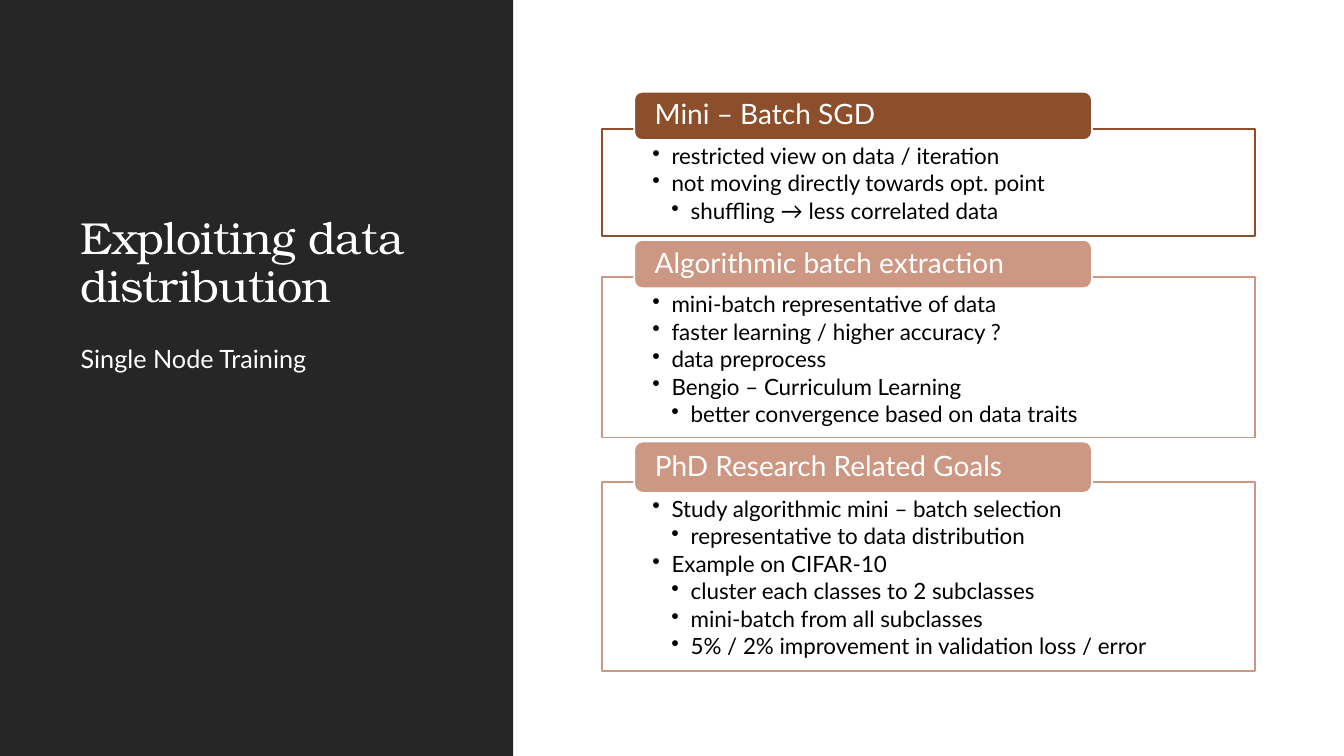
from dataclasses import dataclass

from lxml import etree
from pptx import Presentation
from pptx.dml.color import RGBColor
from pptx.enum.shapes import MSO_SHAPE as Shape
from pptx.enum.text import MSO_ANCHOR as Anchor, MSO_AUTO_SIZE as AutoSize, PP_ALIGN as Align
from pptx.oxml.ns import qn
from pptx.util import Inches, Pt


@dataclass(frozen=True)
class Theme:
    heading_font: str = "TeX Gyre Bonum"
    body_font: str = "Lato"
    title_size: float = 32
    subtitle_size: float = 18
    header_size: float = 20
    bullet_size: float = 16
    line_width: float = 1.25
    dark: str = "262626"
    white: str = "FFFFFF"
    black: str = "000000"
    brown: str = "8D4E2C"
    rose: str = "CC9783"


class SlideBuilder:
    def __init__(self, slide, theme):
        self.slide = slide
        self.theme = theme

    def style(self, paragraph, size, color, font=None, spacing=0.9, after=0):
        paragraph.font.name = font or self.theme.body_font
        paragraph.font.size = Pt(size)
        paragraph.font.color.rgb = RGBColor.from_string(color)
        paragraph.alignment = Align.LEFT
        paragraph.line_spacing = spacing
        paragraph.space_before = Pt(0)
        paragraph.space_after = Pt(after)

    def frame(self, shape, anchor, margins):
        frame = shape.text_frame
        frame.word_wrap = True
        frame.auto_size = AutoSize.NONE
        frame.vertical_anchor = anchor
        (frame.margin_left, frame.margin_top,
         frame.margin_right, frame.margin_bottom) = map(Inches, margins)
        return frame

    def shape(self, kind, box, fill, line=None):
        shape = self.slide.shapes.add_shape(kind, *map(Inches, box))
        shape.shadow.inherit = False
        shape.fill.solid()
        shape.fill.fore_color.rgb = RGBColor.from_string(fill)
        if line:
            shape.line.color.rgb = RGBColor.from_string(line)
            shape.line.width = Pt(self.theme.line_width)
        else:
            shape.line.fill.background()
        return shape

    def side_panel(self, box):
        panel = self.shape(Shape.RECTANGLE, box, self.theme.dark)
        # Behind the placeholders
        self.slide.shapes._spTree.insert(2, panel._element)

    def placeholder(self, shape, box, text, anchor):
        shape.left, shape.top, shape.width, shape.height = map(Inches, box)
        frame = self.frame(shape, anchor, (0.1, 0.05, 0.1, 0.05))
        frame.text = text
        return frame.paragraphs[0]

    def title(self, box, text):
        theme = self.theme
        paragraph = self.placeholder(self.slide.shapes.title, box, text, Anchor.BOTTOM)
        self.style(paragraph, theme.title_size, theme.white, theme.heading_font)
        paragraph.runs[0]._r.get_or_add_rPr().set("spc", "-50")

    def subtitle(self, box, text):
        theme = self.theme
        paragraph = self.placeholder(self.slide.placeholders[1], box, text, Anchor.TOP)
        self.style(paragraph, theme.subtitle_size, theme.white, spacing=1.1, after=2)
        paragraph.space_before = Pt(12)
        self.bullet(paragraph, 0, 0, None)

    def bullet(self, paragraph, left, hanging, mark="•"):
        properties = paragraph._p.get_or_add_pPr()
        properties.set("marL", str(Inches(left)))
        properties.set("indent", str(-Inches(hanging)))
        element = etree.Element(qn("a:buChar" if mark else "a:buNone"))
        if mark:
            element.set("char", mark)
        properties.find(qn("a:defRPr")).addprevious(element)

    def list_box(self, box, color, items):
        theme = self.theme
        shape = self.shape(Shape.RECTANGLE, box, theme.white, color)
        fill_color = shape._element.spPr.find(qn("a:solidFill")).find(qn("a:srgbClr"))
        etree.SubElement(fill_color, qn("a:alpha")).set("val", "90000")
        frame = self.frame(shape, Anchor.TOP, (0.5, 0.16, 0.5, 0.12))
        frame.text = "\n".join(text for _, text in items)
        for paragraph, (level, _) in zip(frame.paragraphs, items):
            self.style(paragraph, theme.bullet_size, theme.black, after=2.4)
            paragraph.level = level
            self.bullet(paragraph, 0.19 * level, 0.19)

    def header(self, box, color, text):
        theme = self.theme
        shape = self.shape(Shape.ROUNDED_RECTANGLE, box, color, theme.white)
        # The rounded corners add about 0.02 inch to the text inset
        frame = self.frame(shape, Anchor.MIDDLE, (0.18, 0, 0.18, 0))
        frame.text = text
        self.style(frame.paragraphs[0], theme.header_size, theme.white)


def main():
    presentation = Presentation()
    presentation.slide_width, presentation.slide_height = Inches(13.33), Inches(7.5)
    slide = presentation.slides.add_slide(presentation.slide_layouts[1])
    theme = Theme()
    builder = SlideBuilder(slide, theme)

    # Left panel with title
    builder.side_panel((0, 0, 5.09, 7.5))
    builder.title((0.7, 0.86, 3.85, 2.29), "Exploiting data distribution")
    builder.subtitle((0.7, 3.33, 3.85, 3.35), "Single Node Training")

    # Sections: header, colour, header height, box height, (level, text) items
    sections = [
        ("Mini – Batch SGD", theme.brown, 0.48, 1.06, [
            (1, "restricted view on data / iteration"),
            (1, "not moving directly towards opt. point"),
            (2, "shuffling → less correlated data"),
        ]),
        ("Algorithmic batch extraction", theme.rose, 0.48, 1.59, [
            (1, "mini-batch representative of data"),
            (1, "faster learning / higher accuracy ?"),
            (1, "data preprocess"),
            (1, "Bengio – Curriculum Learning"),
            (2, "better convergence based on data traits"),
        ]),
        ("PhD Research Related Goals", theme.rose, 0.51, 1.88, [
            (1, "Study algorithmic mini – batch selection"),
            (2, "representative to data distribution"),
            (1, "Example on CIFAR-10"),
            (2, "cluster each classes to 2 subclasses"),
            (2, "mini-batch from all subclasses"),
            (2, "5% / 2% improvement in validation loss / error"),
        ]),
    ]

    # Stack the sections; each header overlaps the top of its box
    top, overlap, gap = 0.91, 0.11, 0.04
    for text, color, header_height, box_height, items in sections:
        box_top = top + header_height - overlap
        builder.list_box((5.97, box_top, 6.48, box_height), color, items)
        builder.header((6.29, top, 4.54, header_height), color, text)
        top = box_top + box_height + gap

    presentation.save("out.pptx")


if __name__ == "__main__":
    main()
